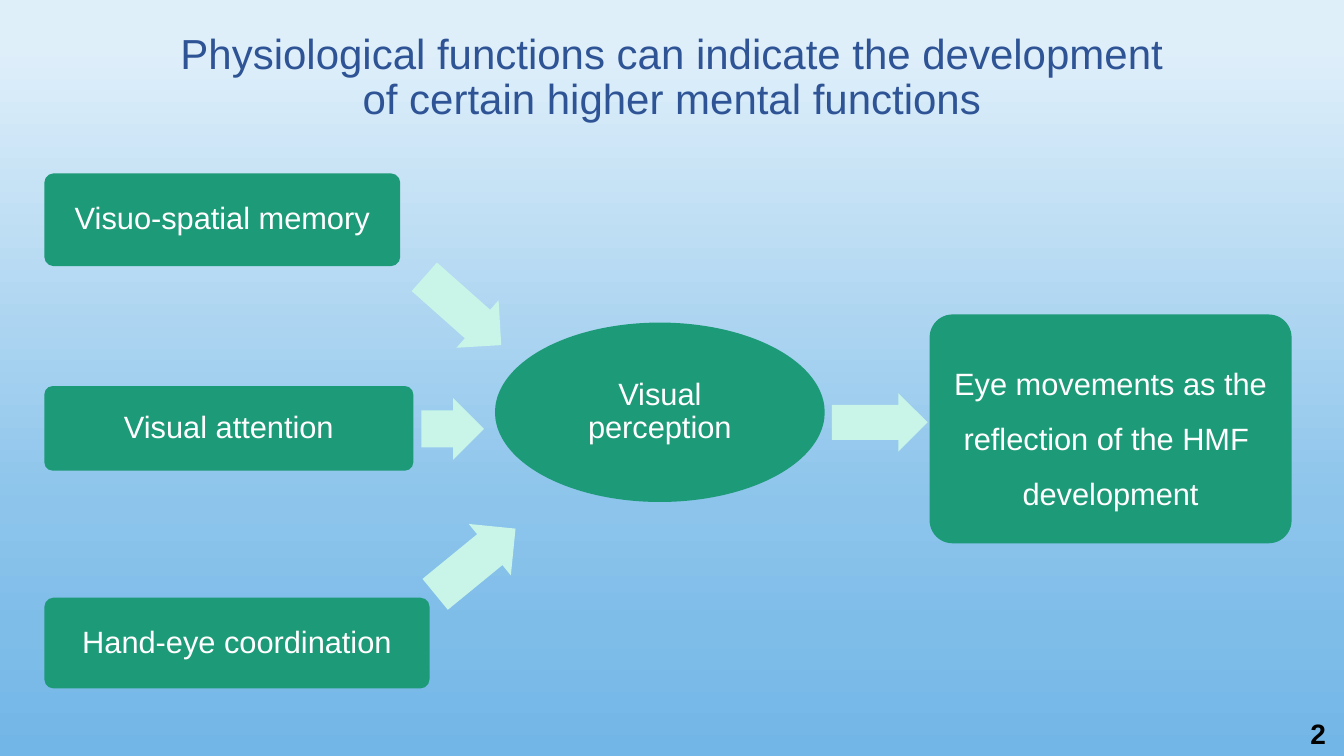
from lxml import etree
from pptx import Presentation
from pptx.dml import color
from pptx.enum import shapes, text
from pptx.oxml import ns
from pptx.util import Inches, Pt

GREEN, MINT, WHITE = "1D9A78", "C8F5E8", "FFFFFF"
SKY = [(6, "DFEFFA"), (67, "8CC4EB"), (83, "7FBDE9"), (100, "72B6E7")]
ABILITIES = [
    ("Visuo-spatial memory", (0.44, 1.72, 3.53, 0.92)),
    ("Visual attention", (0.44, 3.83, 3.66, 0.84)),
    ("Hand-eye coordination", (0.44, 5.93, 3.82, 0.9)),
]
ARROWS = [
    ((4.08, 2.77, 1.02, 0.63), 41.6),
    ((4.18, 3.95, 0.62, 0.61), 0),
    ((4.2, 5.24, 1.03, 0.66), -39.3),
    ((8.25, 3.9, 0.95, 0.58), 0),
]


def rgb(value):
    """Turn a hex string into a colour."""
    return color.RGBColor.from_string(value)


def paint_background(page, stops):
    """Fill the page with a vertical gradient."""
    fill = page.background.fill
    fill.gradient()
    fill.gradient_angle = 270
    stop_list = page.element.find(".//" + ns.qn("a:gsLst"))
    for stop in list(stop_list):
        stop_list.remove(stop)
    for percent, value in stops:
        stop = etree.SubElement(stop_list, ns.qn("a:gs"), pos=str(percent * 1000))
        etree.SubElement(stop, ns.qn("a:srgbClr"), val=value)


def write(box, words, size, value, align=text.PP_ALIGN.CENTER,
          anchor=text.MSO_ANCHOR.MIDDLE, spacing=0.9, bold=False):
    """Put one styled paragraph in a box."""
    frame = box.text_frame
    frame.text = words
    frame.word_wrap = True
    frame.vertical_anchor = anchor
    para = frame.paragraphs[0]
    para.alignment = align
    para.line_spacing = spacing
    font = para.runs[0].font
    font.name, font.size, font.bold = "Arial", Pt(size), bold
    font.color.rgb = rgb(value)


def add_figure(page, kind, place, value):
    """Add a flat preset shape without outline."""
    figure = page.shapes.add_shape(kind, *map(Inches, place))
    figure.shadow.inherit = False
    figure.fill.solid()
    figure.fill.fore_color.rgb = rgb(value)
    figure.line.fill.background()
    return figure


def add_node(page, kind, place, words, inset=0.05, spacing=0.9):
    """Add a green shape with a white label."""
    node = add_figure(page, kind, place, GREEN)
    if kind == shapes.MSO_SHAPE.ROUNDED_RECTANGLE:
        node.adjustments[0] = 0.1
    frame = node.text_frame
    frame.margin_left = frame.margin_right = Inches(inset)
    frame.margin_top = frame.margin_bottom = Inches(inset)
    write(node, words, 22, WHITE, spacing=spacing)


def add_arrow(page, place, angle):
    """Add a pale block arrow turned by an angle."""
    arrow = add_figure(page, shapes.MSO_SHAPE.RIGHT_ARROW, place, MINT)
    arrow.adjustments[0] = 0.6
    arrow.adjustments[1] = 0.5
    arrow.rotation = angle


def add_label(page, place, *args, **options):
    """Add a text box with one paragraph."""
    write(page.shapes.add_textbox(*map(Inches, place)), *args, **options)


def main():
    """Build the slide and save it."""
    deck = Presentation()
    deck.slide_width, deck.slide_height = Inches(13.33), Inches(7.5)
    page = deck.slides.add_slide(deck.slide_layouts[6])
    paint_background(page, SKY)
    add_label(page, (1.52, 0.18, 10.29, 1.2),
              "Physiological functions can indicate the development "
              "of certain higher mental functions", 30, "2F5496")
    rounded = shapes.MSO_SHAPE.ROUNDED_RECTANGLE
    for words, place in ABILITIES:
        add_node(page, rounded, place, words)
    add_node(page, shapes.MSO_SHAPE.OVAL, (4.91, 3.2, 3.27, 1.78),
             "Visual perception", inset=0.02)
    add_node(page, rounded, (9.22, 3.12, 3.59, 2.27),
             "Eye movements as the reflection of the HMF  development", spacing=1.5)
    for place, angle in ARROWS:
        add_arrow(page, place, angle)
    add_label(page, (10.26, 7.12, 2.99, 0.37), "2", 20, "000000",
              align=text.PP_ALIGN.RIGHT, anchor=text.MSO_ANCHOR.BOTTOM,
              spacing=1.0, bold=True)
    deck.save("out.pptx")


if __name__ == "__main__":
    main()
